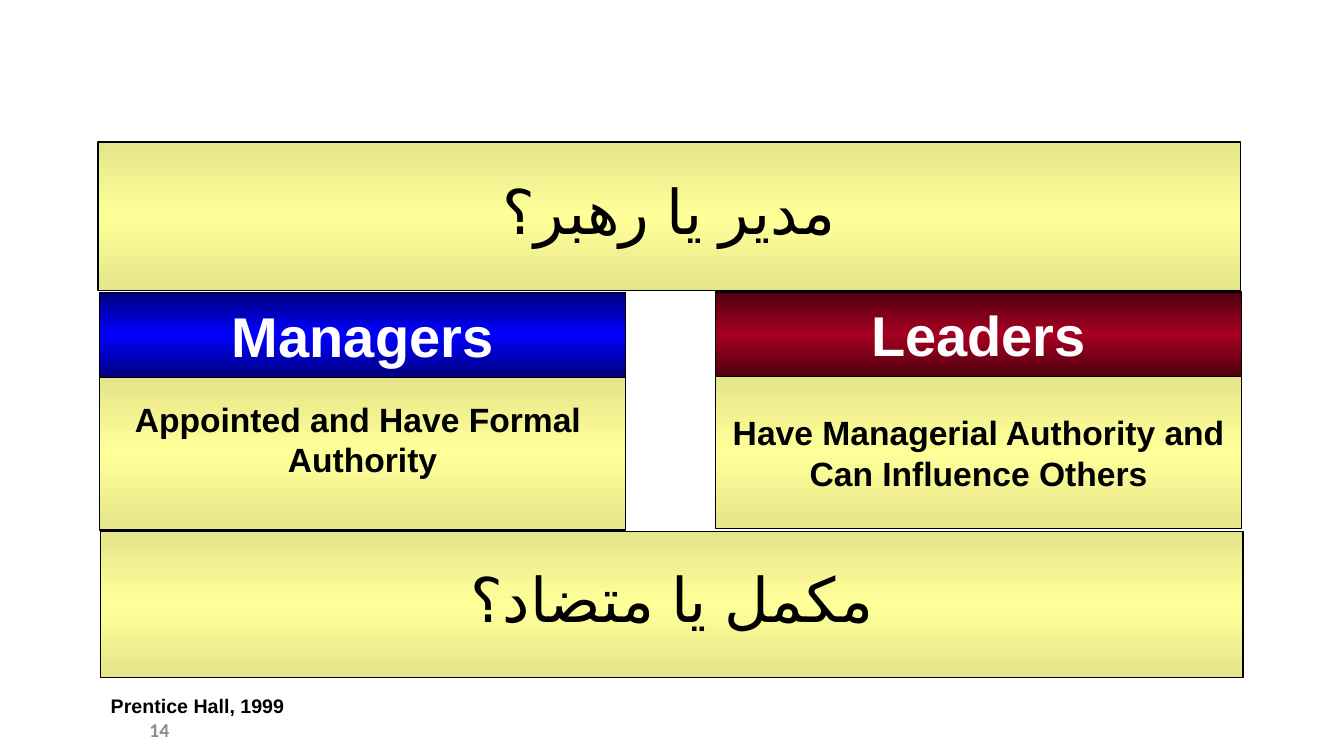
from copy import deepcopy

from pptx import Presentation
from pptx.dml.color import RGBColor
from pptx.enum.shapes import MSO_SHAPE
from pptx.enum.text import MSO_ANCHOR, MSO_AUTO_SIZE, PP_ALIGN
from pptx.oxml.ns import qn
from pptx.util import Pt

YELLOW = ("E5E58A", "FFFF99")
BLUE = ("00007F", "0000FF")
RED = ("520010", "A50021")


def rgb(value):
    """Turn a hex string into a colour."""
    return RGBColor.from_string(value)


def place(sp, x, y, w, h):
    """Move a shape to a box given in points."""
    sp.left, sp.top, sp.width, sp.height = Pt(x), Pt(y), Pt(w), Pt(h)


def paint(sp, shades):
    """Give a shape a vertical edge-middle-edge gradient and a black outline."""
    edge, middle = shades
    sp.fill.gradient()
    sp.fill.gradient_angle = 270
    first, second = sp.fill.gradient_stops
    first.color.rgb, second.color.rgb = rgb(edge), rgb(middle)
    first.position, second.position = 0, 0.5
    stops = sp._element.spPr.find(qn("a:gradFill")).find(qn("a:gsLst"))
    last = deepcopy(stops[0])
    last.set("pos", "100000")
    stops.append(last)
    sp.line.color.rgb = rgb("000000")
    sp.line.width = Pt(1)


def write(sp, lines, size, color="000000", bold=True, font="Arial",
          align=PP_ALIGN.CENTER, anchor=MSO_ANCHOR.MIDDLE, bottom=3.6):
    """Fill a shape with evenly formatted paragraphs."""
    tf = sp.text_frame
    tf.word_wrap = True
    tf.auto_size = MSO_AUTO_SIZE.NONE
    tf.vertical_anchor = anchor
    tf.margin_left = tf.margin_right = Pt(7.2)
    tf.margin_top, tf.margin_bottom = Pt(3.6), Pt(bottom)
    tf.text = "\n".join(lines)
    for p in tf.paragraphs:
        p.alignment = align
        p.font.name, p.font.size, p.font.bold = font, Pt(size), bold
        p.font.color.rgb = rgb(color)


def add_panel(s, x, y, w, h, shades):
    """Add a gradient rectangle without shadow."""
    sp = s.shapes.add_shape(MSO_SHAPE.RECTANGLE, Pt(x), Pt(y), Pt(w), Pt(h))
    sp.shadow.inherit = False
    paint(sp, shades)
    return sp


def write_banner(sp, text):
    """Write a large right-to-left question in a banner."""
    write(sp, [text], 44, bold=False)
    p = sp.text_frame.paragraphs[0]
    p.line_spacing = 0.8
    p._p.get_or_add_pPr().set("rtl", "1")
    r_pr = p.runs[0]._r.get_or_add_rPr()
    r_pr.set("lang", "fa-IR")
    r_pr.makeelement(qn("a:cs"), {})
    cs = r_pr.makeelement(qn("a:cs"), {"typeface": "Arial"})
    r_pr.append(cs)


def add_column(s, x, y, w, h, heading, shades, lines, bottom):
    """Add a coloured heading with its description below."""
    head_h = 60.5
    write(add_panel(s, x, y + head_h, w, h - head_h, YELLOW), lines, 24, bottom=bottom)
    write(add_panel(s, x, y, w, head_h, shades), [heading], 40, "FFFFFF")


def add_footer(s, x, y):
    """Add the source line and the slide number."""
    source = s.shapes.add_textbox(Pt(x + 60.5), Pt(y), Pt(200), Pt(36))
    write(source, ["Prentice Hall, 1999"], 14, align=PP_ALIGN.LEFT, anchor=MSO_ANCHOR.TOP)
    number = s.shapes.add_textbox(Pt(x), Pt(y + 16.5), Pt(116.5), Pt(25))
    write(number, ["14"], 14, "8C8C8C", font="Calibri", align=PP_ALIGN.RIGHT)


def main():
    """Build the slide and save it."""
    prs = Presentation()
    prs.slide_width, prs.slide_height = Pt(960), Pt(540)
    s = prs.slides.add_slide(prs.slide_layouts[5])
    title = s.shapes.title
    place(title, 70, 101.5, 816, 106)
    paint(title, YELLOW)
    write_banner(title, "مدیر یا رهبر؟")
    add_column(s, 511, 208.5, 376, 169, "Leaders", RED,
               ["Have Managerial Authority and", "Can Influence Others"], 3.6)
    add_column(s, 71, 209, 376, 169.5, "Managers", BLUE,
               ["Appointed and Have Formal ", "Authority"], 24.5)
    write_banner(add_panel(s, 72, 379.5, 816, 104.5, YELLOW), "مکمل یا متضاد؟")
    add_footer(s, 11.5, 492)
    prs.save("out.pptx")


if __name__ == "__main__":
    main()
